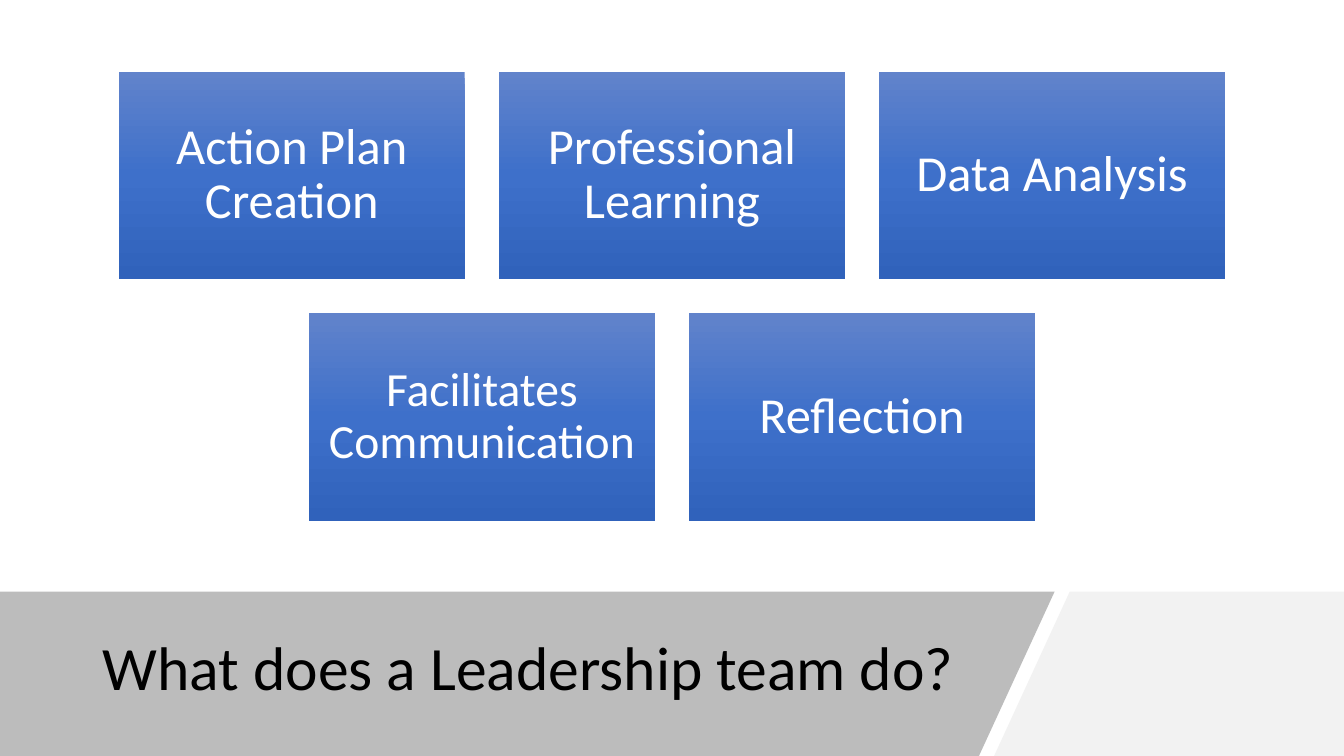
from lxml import etree
from pptx import Presentation
from pptx.dml.color import RGBColor
from pptx.enum.shapes import MSO_SHAPE
from pptx.enum.text import MSO_ANCHOR, MSO_AUTO_SIZE, PP_ALIGN
from pptx.oxml.ns import qn
from pptx.util import Inches, Pt

RECTANGLE = MSO_SHAPE.RECTANGLE
MIDDLE = MSO_ANCHOR.MIDDLE
NO_AUTOFIT = MSO_AUTO_SIZE.NONE
LEFT, CENTER = PP_ALIGN.LEFT, PP_ALIGN.CENTER

FONT = "Calibri"
COLORS = {
    "title": "000000",
    "card_text": "FFFFFF",
    "band": "595959",
    "corner": "F2F2F2",
    "card_top": "6183CB",
    "card_middle": "3E70CA",
    "card_bottom": "3062BB",
}
CARD_STOPS = [(0, "card_top"), (50, "card_middle"), (100, "card_bottom")]
CARD_WIDTH, CARD_HEIGHT, CARD_GAP = 3.43, 2.06, 0.34
SLIDE_WIDTH, SLIDE_HEIGHT = 13.33, 7.5
CARDS_TOP, BAND_TOP = 0.71, 5.87
CARD_ROWS = [
    [("Action Plan Creation", 36), ("Professional Learning", 36), ("Data Analysis", 36)],
    [("Facilitates Communication", 34), ("Reflection", 36)],
]


def write_text(shape, text, size, color, align=CENTER, inset=0.1):
    frame = shape.text_frame
    frame.text = text
    frame.word_wrap = True
    frame.auto_size = NO_AUTOFIT
    frame.vertical_anchor = MIDDLE
    frame.margin_left = frame.margin_right = Inches(inset)
    frame.margin_top = frame.margin_bottom = Inches(min(inset, 0.15))
    paragraph = frame.paragraphs[0]
    paragraph.alignment = align
    paragraph.line_spacing = 0.9
    font = paragraph.runs[0].font
    font.name = FONT
    font.size = Pt(size)
    font.color.rgb = RGBColor.from_string(COLORS[color])


class SlideBuilder:
    """Holds the current slide and draws its elements in one style."""

    def __init__(self, slide):
        self.slide = slide
        self.shapes = slide.shapes

    def title(self, text, left, top, width, height):
        shape = self.shapes.title
        shape.left, shape.top = Inches(left), Inches(top)
        shape.width, shape.height = Inches(width), Inches(height)
        write_text(shape, text, 44, "title", align=LEFT)
        self.shapes.element.append(shape.element)

    def polygon(self, points, color, opacity=100):
        corners = [(Inches(x), Inches(y)) for x, y in points]
        builder = self.shapes.build_freeform(*corners[0])
        builder.add_line_segments(corners[1:], close=True)
        shape = builder.convert_to_shape()
        shape.shadow.inherit = False
        shape.line.fill.background()
        shape.fill.solid()
        shape.fill.fore_color.rgb = RGBColor.from_string(COLORS[color])
        if opacity < 100:
            fill_color = shape.element.spPr.find(".//" + qn("a:srgbClr"))
            etree.SubElement(fill_color, qn("a:alpha"), val=str(opacity * 1000))

    def card(self, text, size, left, top):
        shape = self.shapes.add_shape(
            RECTANGLE, Inches(left), Inches(top), Inches(CARD_WIDTH), Inches(CARD_HEIGHT)
        )
        shape.shadow.inherit = False
        shape.line.fill.background()
        shape.fill.gradient()
        shape.fill.gradient_angle = 270
        stops = shape.element.spPr.find(".//" + qn("a:gsLst"))
        for stop in list(stops):
            stops.remove(stop)
        for position, color in CARD_STOPS:
            stop = etree.SubElement(stops, qn("a:gs"), pos=str(position * 1000))
            etree.SubElement(stop, qn("a:srgbClr"), val=COLORS[color])
        write_text(shape, text, size, "card_text", inset=size / 240)

    def card_row(self, cards, top):
        step = CARD_WIDTH + CARD_GAP
        left = (SLIDE_WIDTH - len(cards) * step + CARD_GAP) / 2
        for column, (text, size) in enumerate(cards):
            self.card(text, size, left + column * step, top)


def main():
    presentation = Presentation()
    presentation.slide_width = Inches(SLIDE_WIDTH)
    presentation.slide_height = Inches(SLIDE_HEIGHT)
    title_only = presentation.slide_layouts[5]
    builder = SlideBuilder(presentation.slides.add_slide(title_only))

    builder.polygon(
        [(10.61, BAND_TOP), (SLIDE_WIDTH, BAND_TOP), (SLIDE_WIDTH, SLIDE_HEIGHT), (9.86, SLIDE_HEIGHT)],
        "corner",
    )
    builder.polygon(
        [(0, BAND_TOP), (10.46, BAND_TOP), (9.71, SLIDE_HEIGHT), (0, SLIDE_HEIGHT)],
        "band",
        opacity=40,
    )
    builder.title("What does a Leadership team do?", 0.92, 6.05, 8.83, 1.2)
    for row, cards in enumerate(CARD_ROWS):
        builder.card_row(cards, CARDS_TOP + row * (CARD_HEIGHT + CARD_GAP))

    presentation.save("out.pptx")


if __name__ == "__main__":
    main()
